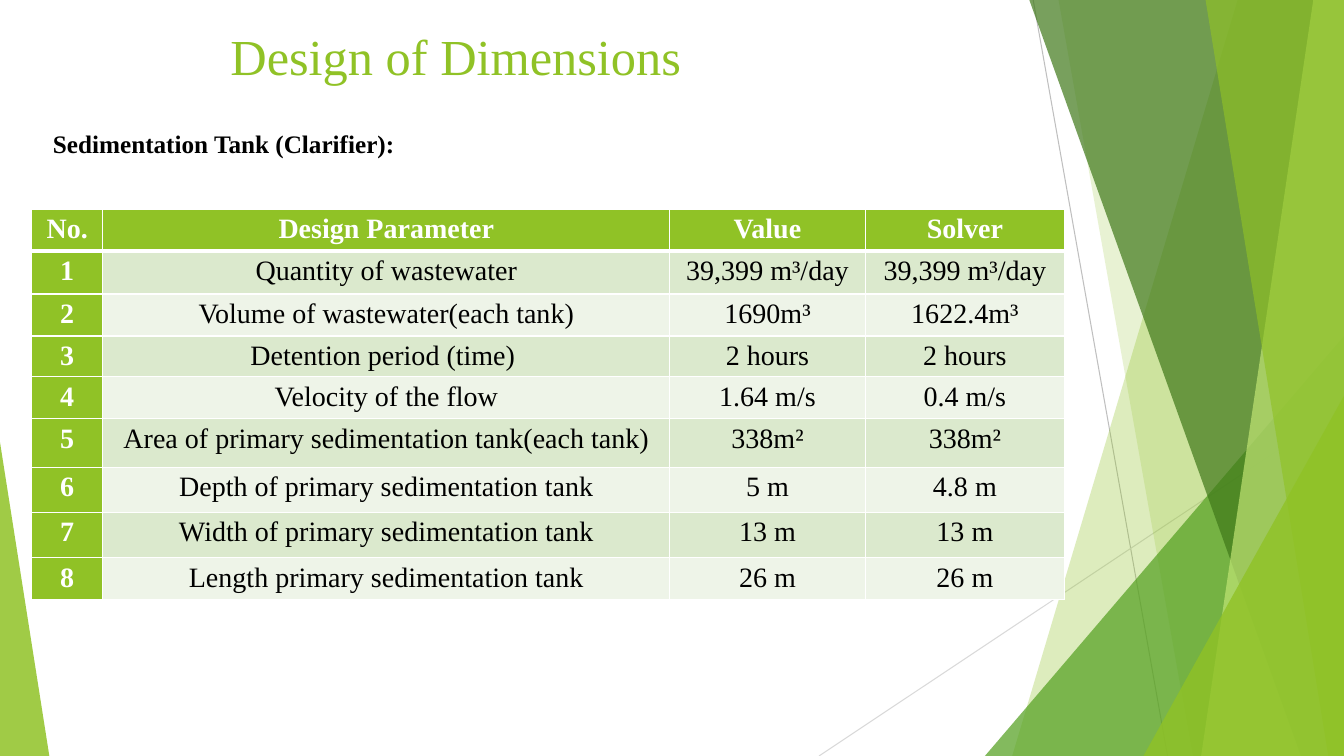
from lxml.etree import SubElement
from pptx import Presentation
from pptx.dml.color import RGBColor
from pptx.enum.shapes import MSO_CONNECTOR, MSO_SHAPE
from pptx.enum.text import MSO_ANCHOR, PP_ALIGN
from pptx.oxml.ns import qn
from pptx.util import Pt

PX = 9525  # EMU in one px
WIDE, HIGH = 1280, 720
FONT = "Times New Roman"
LIME, GREEN, DARK, PALE = "90C226", "54A021", "3F7819", "C0E474"
WHITE, BLACK = "FFFFFF", "000000"
BANDS = ["DBE9CD", "EEF4E8"]

COLS = [68, 540, 186, 190]
ROWS = [40, 41, 40, 39, 40, 46, 43, 43, 40]
HEAD = ["No.", "Design Parameter", "Value", "Solver"]
DATA = [
    ["Quantity of wastewater", "39,399 m³/day", "39,399 m³/day"],
    ["Volume of wastewater(each tank)", "1690m³", "1622.4m³"],
    ["Detention period (time) ", "2 hours", "2 hours"],
    ["Velocity of the flow", "1.64 m/s", "0.4 m/s"],
    ["Area of primary sedimentation tank(each tank)", "338m²", "338m²"],
    ["Depth of primary sedimentation tank", "5 m", "4.8 m"],
    ["Width of primary sedimentation tank", "13 m", "13 m"],
    ["Length primary sedimentation tank", "26 m", "26 m"],
]


def px(*nums):
    return [n * PX for n in nums]


def paint(fill, color, alpha=100):
    fill.solid()
    fill.fore_color.rgb = RGBColor.from_string(color)
    if alpha < 100:
        tint = fill._xPr.find(".//" + qn("a:srgbClr"))
        SubElement(tint, qn("a:alpha"), val=str(alpha * 1000))


def write(frame, text, size=20, color=BLACK, bold=False,
          align=PP_ALIGN.LEFT, space=1.0):
    para = frame.paragraphs[0]
    para.alignment = align
    para.line_spacing = space
    run = para.add_run()
    run.text = text
    font = run.font
    font.name, font.size, font.bold = FONT, Pt(size), bold
    font.color.rgb = RGBColor.from_string(color)


def label(slide, box, text, wrap=True, **style):
    frame = slide.shapes.add_textbox(*px(*box)).text_frame
    frame.word_wrap = wrap
    frame.vertical_anchor = MSO_ANCHOR.MIDDLE
    write(frame, text, **style)


def line(slide, ends, color):
    rule = slide.shapes.add_connector(MSO_CONNECTOR.STRAIGHT, *px(*ends))
    rule.line.width = Pt(0.75)
    rule.line.color.rgb = RGBColor.from_string(color)
    SubElement(rule._element.spPr, qn("a:effectLst"))


def finish(shape, color, alpha):
    shape.shadow.inherit = False
    shape.line.fill.background()
    paint(shape.fill, color, alpha)


def shard(slide, top, foot, color, alpha):
    """Fill from a slanted left edge to the right side of the slide."""
    path = slide.shapes.build_freeform(top, -1, scale=PX)
    path.add_line_segments([(WIDE, -1), (WIDE, HIGH), (foot, HIGH)])
    finish(path.convert_to_shape(), color, alpha)


def wedge(slide, left, top, width, tip, color, alpha):
    """Stand a triangle on the foot of the slide."""
    box = px(left, top, width, HIGH - top)
    shape = slide.shapes.add_shape(MSO_SHAPE.ISOSCELES_TRIANGLE, *box)
    shape.adjustments[0] = tip
    finish(shape, color, alpha)


def edge(cell, foot):
    props = cell._tc.get_or_add_tcPr()
    for side, width in zip("LRTB", [1, 1, 1, foot]):
        rim = SubElement(props, qn("a:ln" + side), w=str(Pt(width)))
        fill = SubElement(rim, qn("a:solidFill"))
        SubElement(fill, qn("a:srgbClr"), val=WHITE)


def grid(slide, left, top):
    box = px(left, top, sum(COLS), sum(ROWS))
    table = slide.shapes.add_table(len(ROWS), len(COLS), *box).table
    for col, width in zip(table.columns, COLS):
        col.width = width * PX
    for row, height in zip(table.rows, ROWS):
        row.height = height * PX
    lines = [HEAD] + [[str(n), *row] for n, row in enumerate(DATA, 1)]
    for r, texts in enumerate(lines):
        for c, text in enumerate(texts):
            cell = table.cell(r, c)
            key = r == 0 or c == 0
            cell.margin_left = cell.margin_right = 7 * PX
            cell.margin_top = cell.margin_bottom = 0
            edge(cell, 1 if r else 3)
            paint(cell.fill, LIME if key else BANDS[(r - 1) % 2])
            write(cell.text_frame, text, color=WHITE if key else BLACK,
                  bold=key, align=PP_ALIGN.CENTER, space=1.15)


def main():
    deck = Presentation()
    deck.slide_width, deck.slide_height = px(WIDE, HIGH)
    slide = deck.slides.add_slide(deck.slide_layouts[6])

    # Green facets on both sides
    line(slide, (984, 0, 1112, HIGH), "BFBFBF")
    line(slide, (WIDE, 387, 780, HIGH), "D9D9D9")
    shard(slide, 1179, 964, LIME, 30)
    shard(slide, 1008, 1136, LIME, 20)
    wedge(slide, 938, 320, 342, 1, GREEN, 72)
    shard(slide, 980, 1239, DARK, 70)
    shard(slide, 1251, 1144, PALE, 70)
    shard(slide, 1148, 1265, LIME, 65)
    wedge(slide, 1089, 377, 191, 1, LIME, 80)
    wedge(slide, 0, 421, 47, 0, LIME, 85)

    # Title, table and heading
    label(slide, (210, 17, 723, 71), "Design of Dimensions",
          size=36, color=LIME)
    grid(slide, 30, 199)
    label(slide, (41, 118, 348, 38), "Sedimentation Tank (Clarifier):",
          wrap=False, size=18, bold=True)

    deck.save("out.pptx")


if __name__ == "__main__":
    main()
